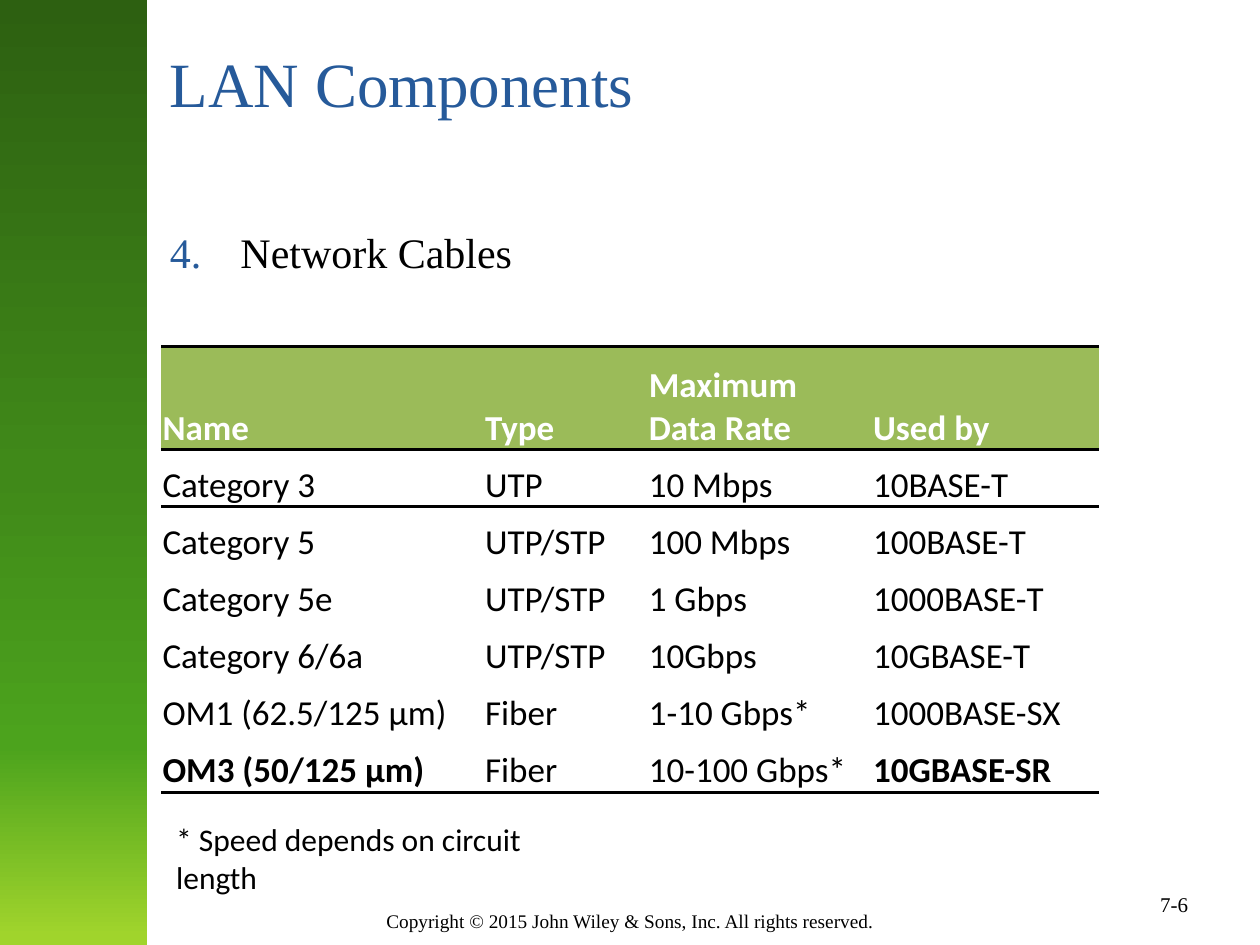
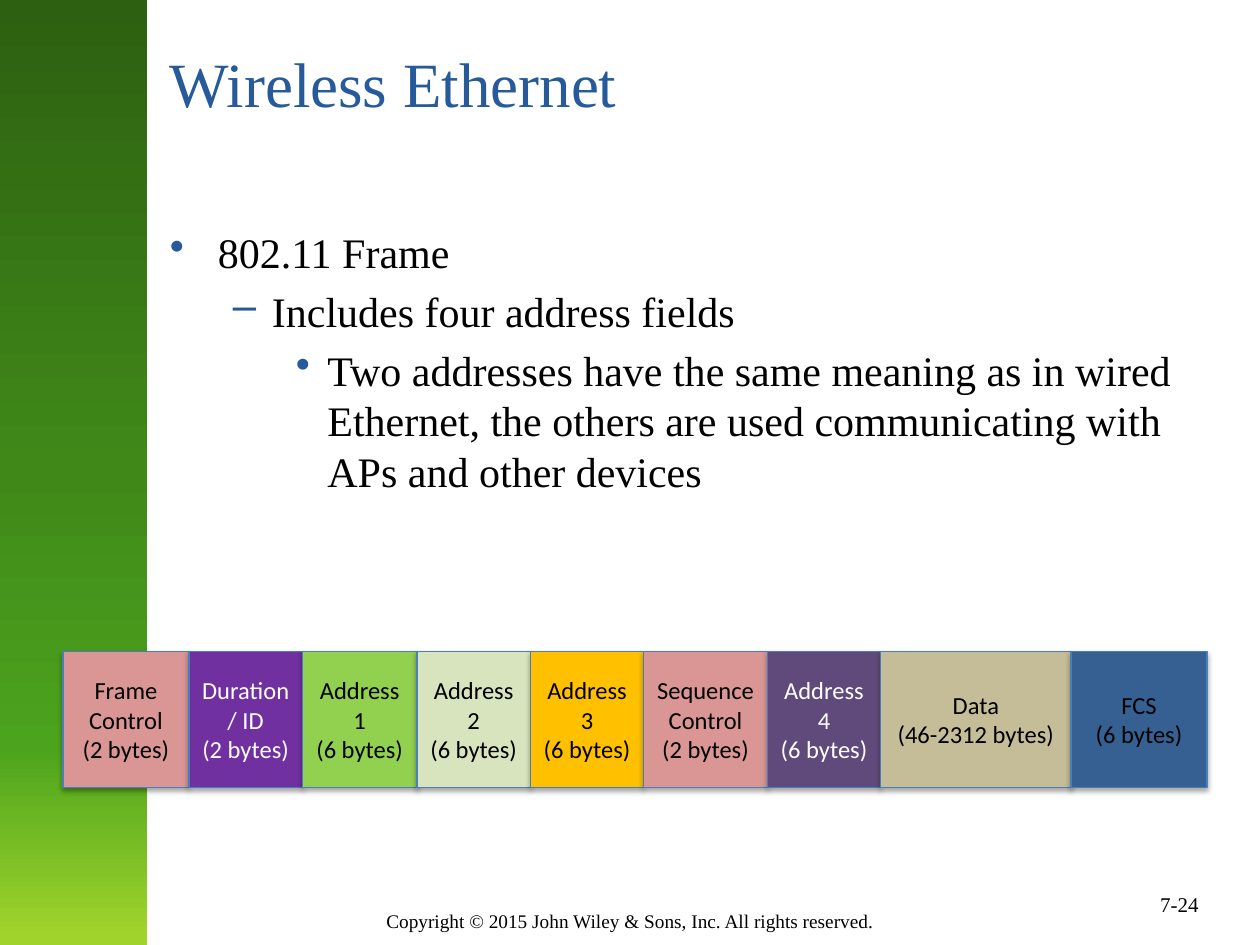
from lxml.etree import SubElement
from pptx import Presentation
from pptx.dml.color import RGBColor
from pptx.enum.shapes import MSO_SHAPE
from pptx.enum.text import MSO_ANCHOR, PP_ALIGN
from pptx.oxml.ns import qn
from pptx.util import Inches, Pt

COLORS = {
    "title": "265A9A", "text": "000000", "light_text": "FFFFFF", "paper": "FFFFFF",
    "table_header": "9BBB59", "field_line": "4B7EBC",
    "rose": "D99694", "violet": "7030A0", "green": "92D050", "pale_green": "D7E4BD",
    "amber": "FFC000", "plum": "604A7B", "sand": "C4BD97", "steel": "376092",
}
BAND_STOPS = [(0, "2D6011"), (50, "408919"), (79, "4CA31D"), (99, "A0D42C")]
SERIF, SANS = "Times New Roman", "Calibri"
NO_TABLE_STYLE = "{2D5ABB26-0587-4C30-8999-92F81FD0307C}"
COPYRIGHT = "Copyright © 2015 John Wiley & Sons, Inc. All rights reserved."

# The slide is a grid of 100 columns by 75 rows
presentation = Presentation()
presentation.slide_width, presentation.slide_height = Inches(10), Inches(7.5)
COLUMN = presentation.slide_width // 100
ROW = presentation.slide_height // 75


def write(text_frame, lines, size, font=SERIF, color="text", bold=False, align=None):
    """Fill a text frame with one paragraph per line, all in the same style."""
    text_frame.text = "\n".join(lines)
    for paragraph in text_frame.paragraphs:
        if align is not None:
            paragraph.alignment = align
        for run in paragraph.runs:
            run.font.size, run.font.name, run.font.bold = Pt(size), font, bold
            run.font.color.rgb = RGBColor.from_string(COLORS[color])


def add_text(slide, left, top, width, height, lines, size, wrap=True, **style):
    """Add a text box placed in grid columns and rows."""
    box = slide.shapes.add_textbox(int(left * COLUMN), int(top * ROW),
                                   int(width * COLUMN), int(height * ROW))
    box.text_frame.word_wrap = wrap
    write(box.text_frame, lines, size, **style)
    return box


# Per bullet: text, left indent in columns, hanging part in columns, marker tag and attributes
slide_contents = [
    ("LAN Components", "7-6", [
        ("Network Cables", 5.6, 5.6, "a:buAutoNum", {"type": "arabicPeriod", "startAt": "4"}),
    ]),
    ("Wireless Ethernet", "7-24", [
        ("802.11 Frame", 3.8, 3.8, "a:buChar", {"char": "•"}),
        ("Includes four address fields", 8.1, 3.1, "a:buChar", {"char": "–"}),
        ("Two addresses have the same meaning as in wired Ethernet, the others are used "
         "communicating with APs and other devices", 12.5, 2.5, "a:buChar", {"char": "•"}),
    ]),
]
slides = []
for title, number, bullets in slide_contents:
    slide = presentation.slides.add_slide(presentation.slide_layouts[6])
    slides.append(slide)
    add_text(slide, 0, 71.7, 100, 2.9, [COPYRIGHT], 11, align=PP_ALIGN.CENTER)
    add_text(slide, 91.1, 70.3, 5.4, 3, [number], 12, wrap=False)

    band = slide.shapes.add_shape(MSO_SHAPE.RECTANGLE, int(-0.2 * COLUMN), 0,
                                  int(11.9 * COLUMN), 75 * ROW)
    band.shadow.inherit = False
    band.line.fill.background()
    band.fill.gradient()
    band.fill.gradient_angle = 270
    stop_list = band._element.spPr.find(qn("a:gradFill")).find(qn("a:gsLst"))
    for stop in list(stop_list):
        stop_list.remove(stop)
    for position, color in BAND_STOPS:
        stop = SubElement(stop_list, qn("a:gs"), pos=str(position * 1000))
        SubElement(stop, qn("a:srgbClr"), val=color)

    add_text(slide, 12.5, 3, 84.2, 12.5, [title], 36, color="title")
    body = add_text(slide, 12.5, 17.5, 84.2, 49.5, [bullet[0] for bullet in bullets], 24)
    for level, (paragraph, bullet) in enumerate(zip(body.text_frame.paragraphs, bullets)):
        _, indent, hanging, marker, marker_attributes = bullet
        properties = paragraph._p.get_or_add_pPr()
        properties.set("marL", str(int(indent * COLUMN)))
        properties.set("indent", str(int(-hanging * COLUMN)))
        marker_color = SubElement(properties, qn("a:buClr"))
        SubElement(marker_color, qn("a:srgbClr"), val=COLORS["title"])
        SubElement(properties, qn(marker), marker_attributes)
        paragraph.level = level
        if level:
            paragraph.space_before = Pt(4.8)

cable_slide, frame_slide = slides

# Cable table
cable_rows = [
    ("Name", "Type", "Maximum Data Rate", "Used by"),
    ("Category 3", "UTP", "10 Mbps", "10BASE-T"),
    ("Category 5", "UTP/STP", "100 Mbps", "100BASE-T"),
    ("Category 5e", "UTP/STP", "1 Gbps", "1000BASE-T"),
    ("Category 6/6a", "UTP/STP", "10Gbps", "10GBASE-T"),
    ("OM1 (62.5/125 µm)", "Fiber", "1-10 Gbps*", "1000BASE-SX"),
    ("OM3 (50/125 µm)", "Fiber", "10-100 Gbps*", "10GBASE-SR"),
]
last_row = len(cable_rows) - 1
bold_cells = {(0, column) for column in range(4)} | {(last_row, 0), (last_row, 3)}
table = cable_slide.shapes.add_table(
    len(cable_rows), 4, int(12.8 * COLUMN), int(27.5 * ROW),
    int(74.4 * COLUMN), int(35.4 * ROW)).table
table.first_row = table.horz_banding = False
table._tbl.tblPr.find(qn("a:tableStyleId")).text = NO_TABLE_STYLE
for table_column, width in zip(table.columns, (25.6, 13, 17.8, 18)):
    table_column.width = int(width * COLUMN)
for row_index, values in enumerate(cable_rows):
    is_header = row_index == 0
    table.rows[row_index].height = int((8.2 if is_header else 4.53) * ROW)
    for column_index, value in enumerate(values):
        cell = table.cell(row_index, column_index)
        write(cell.text_frame, [value], 20, font=SANS,
              color="light_text" if is_header else "text",
              bold=(row_index, column_index) in bold_cells)
        cell.vertical_anchor = MSO_ANCHOR.BOTTOM
        cell.margin_left = cell.margin_right = cell.margin_top = Inches(0.01)
        cell.margin_bottom = 0
        edges = {0: ("a:lnT", "a:lnB"), 1: ("a:lnT",), last_row: ("a:lnB",)}
        for edge in edges.get(row_index, ()):
            border = SubElement(cell._tc.get_or_add_tcPr(), qn(edge), w=str(Pt(2)))
            border_fill = SubElement(border, qn("a:solidFill"))
            SubElement(border_fill, qn("a:srgbClr"), val=COLORS["text"])
        cell.fill.solid()
        cell.fill.fore_color.rgb = RGBColor.from_string(
            COLORS["table_header" if is_header else "paper"])
add_text(cable_slide, 13, 64.6, 36.2, 4, ["* Speed depends on circuit length"], 18, font=SANS)

# 802.11 frame: name, size, width in columns, fill, text color
frame_fields = [
    ("Frame Control", "(2 bytes)", 10, "rose", "text"),
    ("Duration / ID", "(2 bytes)", 9, "violet", "light_text"),
    ("Address 1", "(6 bytes)", 9.1, "green", "text"),
    ("Address 2", "(6 bytes)", 9, "pale_green", "text"),
    ("Address 3", "(6 bytes)", 9, "amber", "text"),
    ("Sequence Control", "(2 bytes)", 9.8, "rose", "text"),
    ("Address 4", "(6 bytes)", 9, "plum", "light_text"),
    ("Data", "(46-2312 bytes)", 15.1, "sand", "text"),
    ("FCS", "(6 bytes)", 10.8, "steel", "text"),
]
field_left = 5
for name, size, width, fill, text_color in frame_fields:
    field = frame_slide.shapes.add_shape(
        MSO_SHAPE.RECTANGLE, int(field_left * COLUMN), int(51.7 * ROW),
        int(width * COLUMN), int(10.8 * ROW))
    field_left += width
    field.fill.solid()
    field.fill.fore_color.rgb = RGBColor.from_string(COLORS[fill])
    field.line.color.rgb = RGBColor.from_string(COLORS["field_line"])
    field.line.width = Pt(0.75)
    field.shadow.inherit = False
    shadow = SubElement(field._element.spPr.find(qn("a:effectLst")), qn("a:outerShdw"),
                        blurRad=str(Pt(3.1)), dist=str(Pt(1.8)), dir="5400000", rotWithShape="0")
    shadow_color = SubElement(shadow, qn("a:srgbClr"), val=COLORS["text"])
    SubElement(shadow_color, qn("a:alpha"), val="35000")
    field.text_frame.word_wrap = True
    field.text_frame.vertical_anchor = MSO_ANCHOR.MIDDLE
    write(field.text_frame, [name, size], 14, font=SANS, color=text_color, align=PP_ALIGN.CENTER)

presentation.save("out.pptx")
